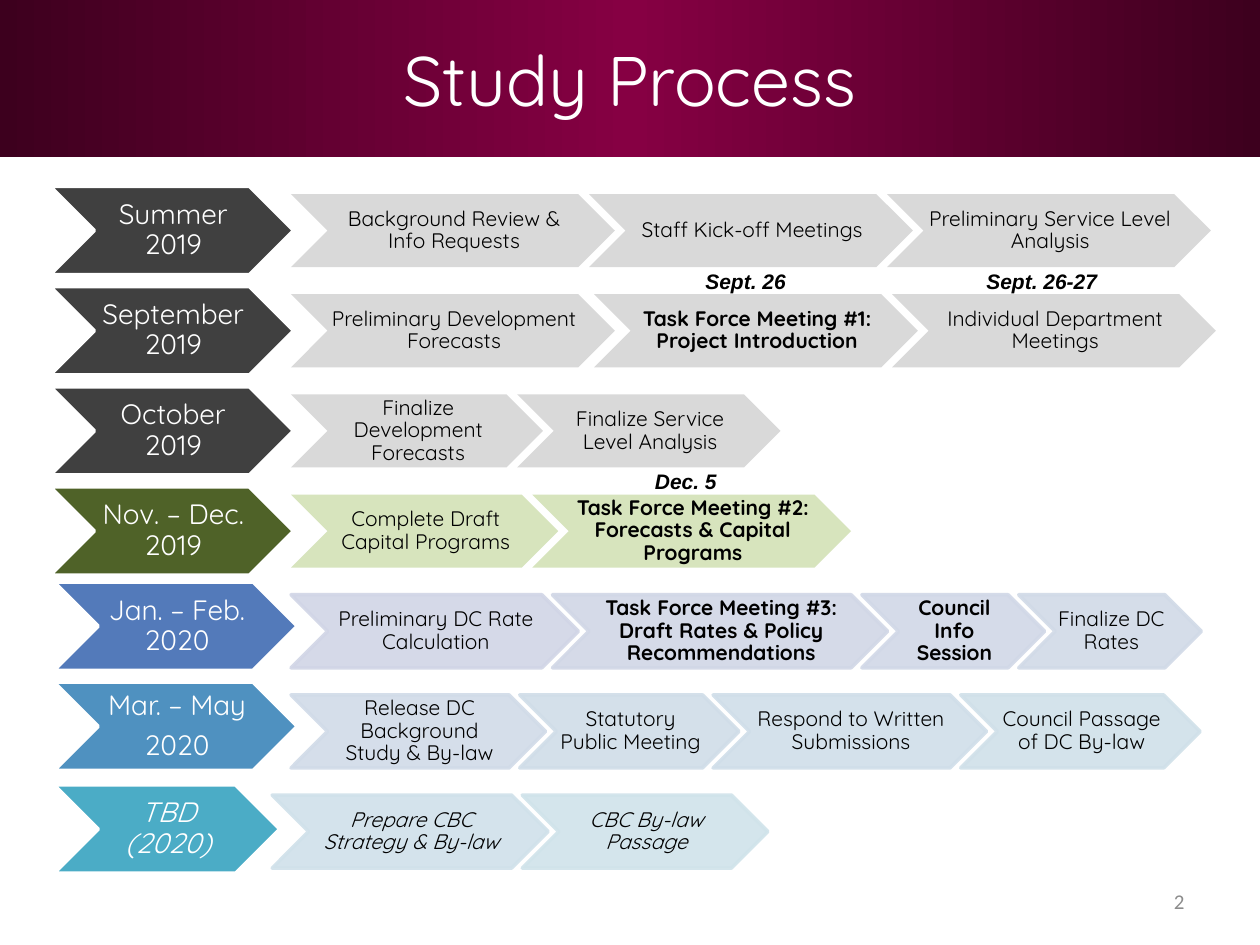
import copy
import itertools

import pptx
import pptx.util
import pptx.dml.color
import pptx.enum.shapes
import pptx.enum.text
import pptx.oxml
import pptx.oxml.ns

Inches, Pt = pptx.util.Inches, pptx.util.Pt
ALIGN, ANCHOR = pptx.enum.text.PP_ALIGN, pptx.enum.text.MSO_ANCHOR
KIND = pptx.enum.shapes.MSO_SHAPE

HEX = {
    "white": "FFFFFF", "black": "000000", "wine": "860043", "edge": "3D001E",
    "coal": "404040", "grey": "D9D9D9", "moss": "4F6228", "lime": "D7E4BD",
    "blue": "537ABA", "sky": "4F91C0", "teal": "4BACC6", "num": "8C8C8C",
}
FADE = ("D1D5E6", "D0E3EA")  # first and last tint of the 2020 tasks
FADED = 10

BOLD = {"bold": True}
SLANT = {"italic": True}
# Each row: month, its colour, task colour (None: faded tint),
# (month left, month width, month lift, task left, later shift), tasks
EARLY = (0.4, 1.93, 0.06, 2.31, 0)
LATE = (0.43, 1.93, 0.1, 2.31, 0)
ROWS = [
    ("Summer 2019", "coal", "grey", EARLY, [
        ("Background Review & Info Requests", 2.57, {}),
        ("Staff Kick-off Meetings", 2.57, {}),
        ("Preliminary Service Level Analysis", 2.57, {})]),
    ("September 2019", "coal", "grey", (0.4, 1.93, 0.06, 2.31, 0.04), [
        ("Preliminary Development Forecasts", 2.57, {}),
        ("Task Force Meeting #1: Project Introduction", 2.57, BOLD),
        ("Individual Department Meetings", 2.57, {})]),
    ("October 2019", "coal", "grey", EARLY, [
        ("Finalize Development Forecasts", 2, {}),
        ("Finalize Service Level Analysis", 2.09, {})]),
    ("Nov. – Dec. 2019", "moss", "lime", EARLY, [
        ("Complete Draft Capital Programs", 2.12, {}),
        ("Task Force Meeting #2: Forecasts & Capital Programs", 2.53, BOLD)]),
    ("Jan. – Feb. 2020", "blue", None, LATE, [
        ("Preliminary DC Rate Calculation", 2.28, {}),
        ("Task Force Meeting #3: Draft Rates & Policy Recommendations", 2.66, BOLD),
        ("Council Info Session", 1.45, BOLD),
        ("Finalize DC Rates", 1.45, {})]),
    ("Mar. – May\n2020", "sky", None, LATE, [
        ("Release DC Background Study & By-law", 2.02, {}),
        ("Statutory Public Meeting", 1.74, {}),
        ("Respond to Written Submissions", 2.17, {}),
        ("Council Passage of DC By-law", 1.9, {})]),
    ("TBD (2020)", "teal", None, (0.43, 1.79, 0.08, 2.16, 0), [
        ("Prepare CBC Strategy & By-law", 2.19, SLANT),
        ("CBC By-law Passage", 1.95, SLANT)]),
]
DATES = [("Sept. 26", 5.5, 2.08), ("Sept. 26-27", 7.73, 2.08), ("Dec. 5", 5.1, 3.67)]

TOP, PITCH, LAP = 1.54, 0.795, 0.205
TALL, SLIM = 0.7, 0.58


def rgb(code):
    return pptx.dml.color.RGBColor.from_string(code)


def blend(share):
    ends = [[int(c[i:i + 2], 16) for i in (0, 2, 4)] for c in FADE]
    return "".join(f"{round(a + (b - a) * share):02X}" for a, b in zip(*ends))


def write(shape, text, size, face, tone, align, frame, gap=None, **style):
    """Fill a shape with text; gap is the line spacing as a share."""
    box = shape.text_frame
    for key, val in {"word_wrap": True, **frame}.items():
        setattr(box, key, val)
    box.text = text
    for par in box.paragraphs:
        par.alignment = align
        par.line_spacing = gap
        for key, val in {"size": Pt(size), "name": face, **style}.items():
            setattr(par.font, key, val)
        par.font.color.rgb = rgb(HEX[tone])
    for par in box.paragraphs[:-1]:
        par.space_after = Pt(size * 0.35)


def veil(shape):
    """Make fill and line 90 percent opaque."""
    for node in shape._element.spPr.iter(pptx.oxml.ns.qn("a:srgbClr")):
        tag = pptx.oxml.parse_xml(
            f'<a:alpha {pptx.oxml.ns.nsdecls("a")} val="90000"/>')
        node.append(tag)


def arrow(box, text, size, tone, fill, line=None, **style):
    shape = shapes.add_shape(KIND.CHEVRON, *map(Inches, box))
    shape.shadow.inherit = False
    shape.fill.solid()
    shape.fill.fore_color.rgb = rgb(fill)
    if line:
        shape.line.color.rgb = rgb(line)
        shape.line.width = Pt(2)
    else:
        shape.line.fill.background()
    frame = {"margin_left": Inches(0.02), "margin_right": 0,
             "margin_top": Inches(0.01), "margin_bottom": Inches(0.01),
             "vertical_anchor": ANCHOR.MIDDLE}
    write(shape, text, size, "Quicksand", tone, ALIGN.CENTER, frame, 0.9, **style)
    return shape


deck = pptx.Presentation()
deck.slide_width, deck.slide_height = Inches(10), Inches(7.5)
slide = deck.slides.add_slide(deck.slide_layouts[5])
shapes = slide.shapes

band = shapes.add_shape(KIND.RECTANGLE, 0, 0, deck.slide_width, Inches(1.25))
band.shadow.inherit = False
band.line.fill.background()
band.fill.gradient()
band.fill.gradient_angle = 0
stops = band.fill.gradient_stops
first = stops[0]._gs
first.addnext(copy.deepcopy(first))
for stop, spot, tone in zip(band.fill.gradient_stops, (0, 0.5, 1),
                            ("edge", "wine", "edge")):
    stop.position = spot
    stop.color.rgb = rgb(HEX[tone])
shapes._spTree.insert(2, band._element)

title = shapes.title
title.left, title.top, title.width, title.height = 0, 0, band.width, band.height
write(title, "Study Process", 40, "Quicksand", "white", ALIGN.CENTER,
      {"vertical_anchor": ANCHOR.MIDDLE})

tint = itertools.count()
for row, (month, dark, pale, place, tasks) in enumerate(ROWS):
    left, wide, lift, x, shift = place
    y = TOP + row * PITCH
    look = SLANT if month.startswith("TBD") else {}
    arrow((left, y - lift, wide, TALL), month, 16, "white", HEX[dark],
          HEX["white"], **look)
    for col, (text, width, style) in enumerate(tasks):
        nudge = shift if col else 0
        fill = HEX[pale] if pale else blend(next(tint) / (FADED - 1))
        task = arrow((x + nudge, y, width, SLIM), text, 12, "black", fill,
                     None if pale else fill, **style)
        if not pale:
            veil(task)
        x += width - LAP

page = shapes.add_textbox(*map(Inches, (7.17, 6.95, 2.33, 0.4)))
write(page, "2", 12, "Calibri", "num", ALIGN.RIGHT,
      {"vertical_anchor": ANCHOR.MIDDLE})
for text, x, y in DATES:
    note = shapes.add_textbox(*map(Inches, (x, y, 1.17, 0.3)))
    write(note, text, 12, "Arial", "black", ALIGN.LEFT, {}, **BOLD, **SLANT)

deck.save("out.pptx")
